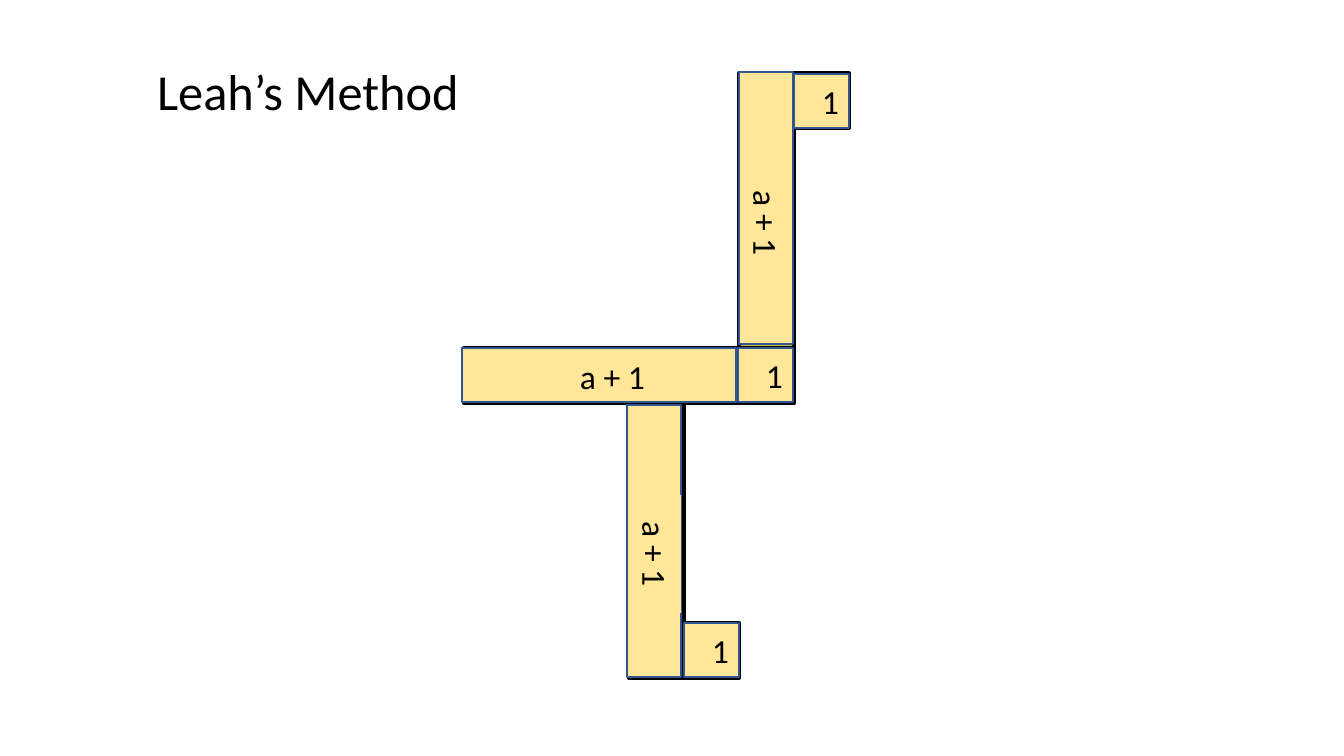
from pptx import Presentation
from pptx.dml.color import RGBColor
from pptx.enum.shapes import MSO_SHAPE as SHAPE
from pptx.enum.text import MSO_ANCHOR as ANCHOR, MSO_AUTO_SIZE as AUTO, PP_ALIGN as ALIGN
from pptx.util import Emu, Pt

TITLE = "Leah’s Method"
TITLE_BOX = (147, 55, 458, 72)
COLORS = {"tile": "C4BB44", "edge": "000000", "cover": "FFE699", "outline": "325491", "text": "000000"}
FONT = "Calibri"

STEP, GRID_LEFT, GRID_TOP = 55, 464, 73
TILES = (
    [(4, 10)]
    + [(3, row) for row in range(6, 11)]
    + [(6, 0)]
    + [(5, row) for row in range(4, -1, -1)]
    + [(col, 5) for col in range(6)]
)

PIECES = [
    ("a + 1", (462, 348, 274, 54), (553, 351, 119, 50), 0),
    ("a + 1", (518, 514, 272, 54), (597, 529, 118, 50), 90),
    ("a + 1", (630, 181, 272, 54), (708, 198, 118, 50), 90),
] + [
    ("1", (x, y, 55, 54), (x + 18, y + 2, 24, 50), 0)
    for x, y in [(738, 348), (794, 74), (684, 623)]
]

PX = 914400 / 100.8


def px(*lengths):
    return [Emu(round(n * PX)) for n in lengths]


def rgb(name):
    return RGBColor.from_string(COLORS[name])


def add_rect(group, box, fill, line=None, width=0, rotation=0):
    sp = group.shapes.add_shape(SHAPE.RECTANGLE, *px(*box))
    sp.shadow.inherit = False
    sp.rotation = rotation
    sp.fill.solid()
    sp.fill.fore_color.rgb = rgb(fill)
    if line:
        sp.line.color.rgb = rgb(line)
        sp.line.width = Pt(width)
    else:
        sp.line.fill.background()
    return sp


def write(sp, text, size, align):
    tf = sp.text_frame
    frame_format = {"word_wrap": True, "auto_size": AUTO.NONE, "vertical_anchor": ANCHOR.TOP}
    for name, value in frame_format.items():
        setattr(tf, name, value)
    p = tf.paragraphs[0]
    p.alignment = align
    r = p.add_run()
    r.text = text
    for name, value in {"name": FONT, "size": Pt(size)}.items():
        setattr(r.font, name, value)
    r.font.color.rgb = rgb("text")


def main():
    prs = Presentation()
    prs.slide_width, prs.slide_height = px(1344, 756)
    s = prs.slides.add_slide(prs.slide_layouts[5])

    title = s.shapes.title
    title.left, title.top, title.width, title.height = px(*TITLE_BOX)
    write(title, TITLE, 36, ALIGN.LEFT)

    tiles = s.shapes.add_group_shape()
    for col, row in TILES:
        box = (GRID_LEFT + col * STEP, GRID_TOP + row * STEP, STEP, STEP)
        add_rect(tiles, box, "tile", "edge", 3)

    covers = s.shapes.add_group_shape()
    for text, cover_box, label_box, rotation in PIECES:
        add_rect(covers, cover_box, "cover", "outline", 1, rotation)
        label = add_rect(covers, label_box, "cover", rotation=rotation)
        write(label, text, 24, ALIGN.CENTER)

    prs.save("out.pptx")


if __name__ == "__main__":
    main()
